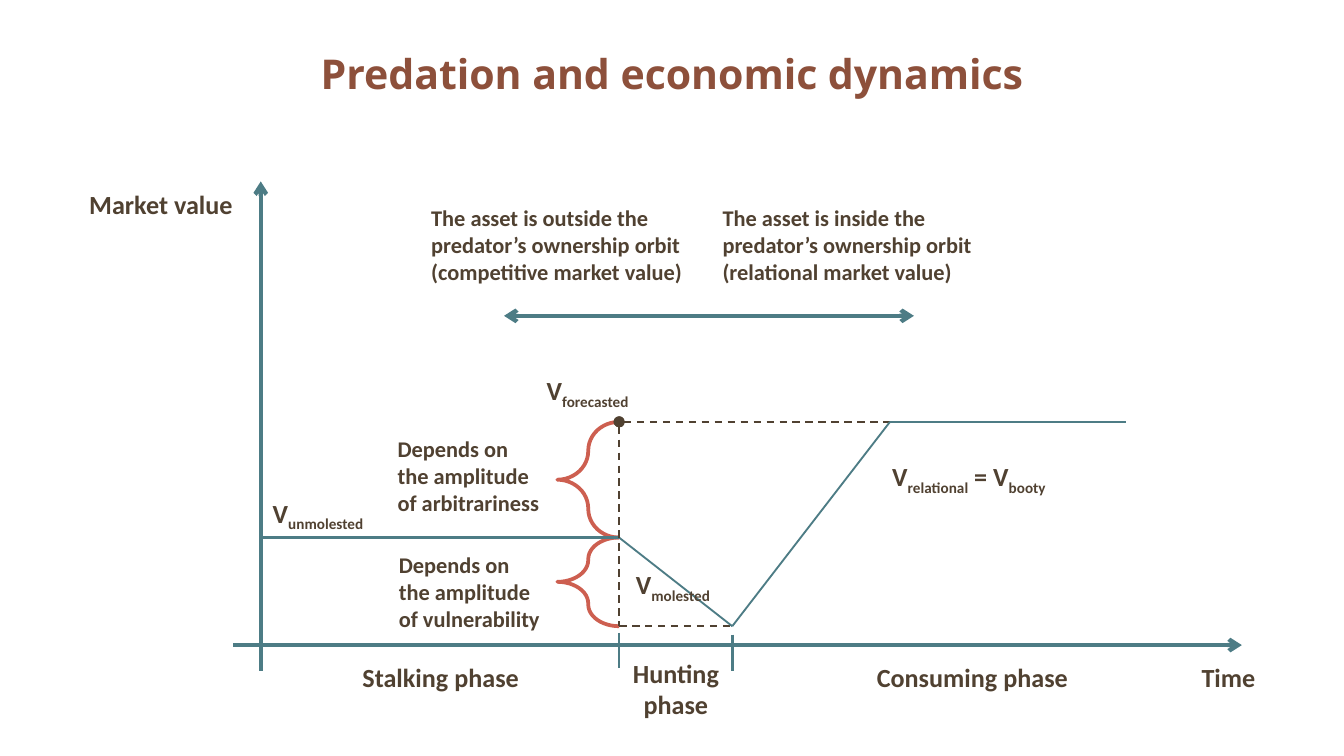
from lxml import etree
from pptx import Presentation
from pptx.dml.color import RGBColor
from pptx.enum import dml, shapes, text
from pptx.oxml.ns import qn
from pptx.util import Pt

COLORS = {"title": "8D503B", "text": "504131", "teal": "4D7C85", "brace": "CD5F50"}

# Time positions (x) and value levels (y) of the diagram
X_START, X_HUNT, X_LOW, X_CONSUME, X_END = 139.7, 331.7, 392.3, 476.8, 603.4
Y_FORECAST, Y_UNMOLESTED, Y_MOLESTED, Y_AXIS = 226, 288, 335.5, 345.6
X_ORBIT, Y_ORBIT = 380, 169.2

LEFT, CENTER, RIGHT = text.PP_ALIGN.LEFT, text.PP_ALIGN.CENTER, text.PP_ALIGN.RIGHT
TOP, MIDDLE = text.MSO_ANCHOR.TOP, text.MSO_ANCHOR.MIDDLE

TITLE = {"size": 22, "name": "Open Sans", "color": "title",
         "align": CENTER, "anchor": MIDDLE, "after": 0}
NOTE = {"size": 12, "anchor": MIDDLE}
PHASE = {"align": CENTER, "spacing": 1.15}
VALUE = {"spacing": 1.15}

# Box (left, top, width, height), format, then normal and subscript runs in turn
TEXTS = [
    ((8.6, 0, 702.8, 77.8), TITLE, ["Predation and economic dynamics"]),
    ((39.6, 95, 92.2, 26.6), {**VALUE, "align": RIGHT, "anchor": MIDDLE}, ["Market value"]),
    ((173.5, 348.5, 125.3, 33.8), PHASE, ["Stalking phase"]),
    ((329, 348.5, 66.2, 42.5), {"align": CENTER}, ["Hunting phase"]),
    ((452.2, 348.5, 137.5, 32.4), PHASE, ["Consuming phase"]),
    ((635.6, 348.5, 45, 33.8), PHASE, ["Time"]),
    ((139, 260, 68.4, 40.3), VALUE, ["V", "unmolested"]),
    ((285.8, 194.4, 143.3, 40.3), VALUE, ["V", "forecasted"]),
    ((470.9, 240.5, 118.8, 40.3), VALUE, ["V", "relational", " = V", "booty"]),
    ((340.6, 301.7, 46.8, 20.2), {**VALUE, "inset": 0}, ["V", "molested"]),
    ((205.9, 220.5, 92.2, 68.4), NOTE, ["Depends on the amplitude of arbitrariness"]),
    ((206.6, 288.2, 91.6, 57.6), NOTE, ["Depends on the amplitude of vulnerability"]),
    ((223.9, 103, 156.2, 56.2), NOTE,
     ["The asset is outside the predator’s ownership orbit (competitive market value)"]),
    ((X_ORBIT, 103, 161.3, 56.2), NOTE,
     ["The asset is inside the predator’s ownership orbit (relational market value)"]),
]

# Top, bottom, curvature
BRACES = [
    (Y_FORECAST, Y_UNMOLESTED, 0.465),
    (Y_UNMOLESTED, Y_MOLESTED, 0.351),
]
BRACE_WIDTH = 33.1

CURVE = {"color": "teal", "width": 1}
TICK = {"color": "teal", "width": 1.5}
GUIDE = {"color": "text", "width": 1, "dash": True}
DOT_GUIDE = {**GUIDE, "headEnd": "oval"}
AXIS = {"color": "teal", "width": 2.25, "headEnd": "arrow"}
ORBIT = {"color": "teal", "width": 2.25, "tailEnd": "arrow"}

# From x, y to x, y, then format
LINES = [
    ((X_LOW, 340, X_LOW, 359.3), TICK),
    ((X_HUNT, Y_MOLESTED, X_LOW + 1.5, Y_MOLESTED), GUIDE),
    ((X_START, Y_UNMOLESTED, X_HUNT, Y_UNMOLESTED), {**CURVE, "width": 1.25}),
    ((X_HUNT, Y_UNMOLESTED, X_LOW, Y_MOLESTED), CURVE),
    ((X_HUNT, Y_FORECAST, X_CONSUME, Y_FORECAST), DOT_GUIDE),
    ((X_START, 97.2, X_START, 359.3), AXIS),
    ((665.3, Y_AXIS, 124.6, Y_AXIS), AXIS),
    ((X_CONSUME, Y_FORECAST, X_LOW, Y_MOLESTED), CURVE),
    ((X_HUNT, 339.1, X_HUNT, 357.8), {**TICK, "width": 1}),
    ((X_CONSUME, Y_FORECAST, X_END, Y_FORECAST), CURVE),
    ((X_ORBIT, Y_ORBIT, 270, Y_ORBIT), ORBIT),
    ((X_ORBIT, Y_ORBIT, 489.6, Y_ORBIT), ORBIT),
    ((X_HUNT, Y_FORECAST, X_HUNT, Y_MOLESTED), DOT_GUIDE),
]


def rgb(name):
    return RGBColor.from_string(COLORS[name])


def add_text(s, box, fmt, parts):
    sp = s.shapes.add_textbox(*map(Pt, box))
    tf = sp.text_frame
    tf.word_wrap = True
    tf.vertical_anchor = fmt.get("anchor", TOP)
    if "inset" in fmt:
        for side in ("left", "top", "right", "bottom"):
            setattr(tf, f"margin_{side}", Pt(fmt["inset"]))
    p = tf.paragraphs[0]
    layout = {"alignment": fmt.get("align", LEFT), "line_spacing": fmt.get("spacing", 1.0),
              "space_after": Pt(fmt.get("after", 10))}
    for key, value in layout.items():
        setattr(p, key, value)
    font = {"size": Pt(fmt.get("size", 14)), "name": fmt.get("name", "Calibri"), "bold": True}
    for i, part in enumerate(parts):
        r = p.add_run()
        r.text = part
        for key, value in font.items():
            setattr(r.font, key, value)
        r.font.color.rgb = rgb(fmt.get("color", "text"))
        if i % 2:
            r._r.get_or_add_rPr().set("baseline", "-25000")


def add_brace(s, top, bottom, curve):
    sp = s.shapes.add_shape(shapes.MSO_SHAPE.LEFT_BRACE, Pt(X_HUNT - BRACE_WIDTH), Pt(top),
                            Pt(BRACE_WIDTH), Pt(bottom - top))
    sp.shadow.inherit = False
    sp.adjustments[0] = curve
    sp.adjustments[1] = 0.5
    sp.fill.background()
    sp.line.color.rgb = rgb("brace")
    sp.line.width = Pt(2)


def add_line(s, ends, fmt):
    line = s.shapes.add_connector(shapes.MSO_CONNECTOR.STRAIGHT, *map(Pt, ends))
    line.line.color.rgb = rgb(fmt["color"])
    line.line.width = Pt(fmt["width"])
    if fmt.get("dash"):
        line.line.dash_style = dml.MSO_LINE.DASH
    ln = line.line._get_or_add_ln()
    for end in ("headEnd", "tailEnd"):
        if end in fmt:
            etree.SubElement(ln, qn(f"a:{end}"), type=fmt[end])
    etree.SubElement(line._element.spPr, qn("a:effectLst"))


def main():
    prs = Presentation()
    prs.slide_width, prs.slide_height = Pt(720), Pt(405)
    s = prs.slides.add_slide(prs.slide_layouts[6])
    for brace in BRACES:
        add_brace(s, *brace)
    for ends, fmt in LINES:
        add_line(s, ends, fmt)
    for box, fmt, parts in TEXTS:
        add_text(s, box, fmt, parts)
    prs.save("out.pptx")


if __name__ == "__main__":
    main()
